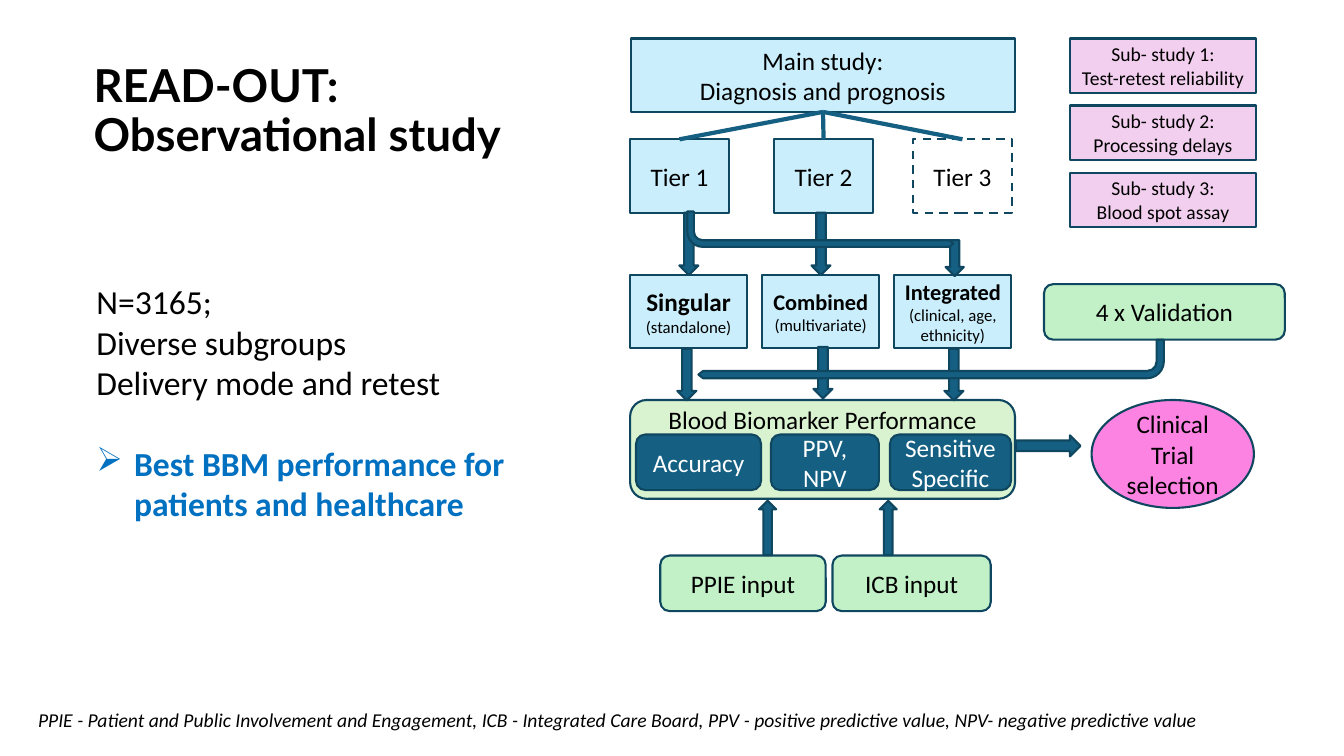
from dataclasses import dataclass

from lxml import etree
from pptx import Presentation
from pptx.dml.color import RGBColor
from pptx.enum.dml import MSO_LINE
from pptx.enum.shapes import MSO_CONNECTOR, MSO_SHAPE
from pptx.enum.text import MSO_ANCHOR, PP_ALIGN
from pptx.oxml.ns import qn
from pptx.util import Cm, Pt

RECT, ROUND, OVAL = MSO_SHAPE.RECTANGLE, MSO_SHAPE.ROUNDED_RECTANGLE, MSO_SHAPE.OVAL
DOWN, UP, RIGHT = MSO_SHAPE.DOWN_ARROW, MSO_SHAPE.UP_ARROW, MSO_SHAPE.RIGHT_ARROW
BENT = MSO_SHAPE.BENT_ARROW
STRAIGHT, DASH = MSO_CONNECTOR.STRAIGHT, MSO_LINE.DASH
TOP, MIDDLE = MSO_ANCHOR.TOP, MSO_ANCHOR.MIDDLE
LEFT, CENTER = PP_ALIGN.LEFT, PP_ALIGN.CENTER


@dataclass(frozen=True)
class Theme:
    """Colours, fonts and type sizes of the slide."""
    black: str = "000000"
    white: str = "FFFFFF"
    accent: str = "0070C0"
    outline: str = "104760"
    teal: str = "156082"
    sky: str = "CAEEFB"
    lilac: str = "F2CFEE"
    lime: str = "D9F2D0"
    mint: str = "C2F1C8"
    pink: str = "FD83E3"
    title_font: str = "Lato"
    body_font: str = "Calibri"
    title: float = 32.4
    body: float = 24
    label: float = 18
    heading: float = 16
    note: float = 14
    detail: float = 12
    border: float = 1.5
    branch: float = 3


THEME = Theme()


def write(tf, text, size=THEME.label, color=THEME.black, bold=False, italic=False,
          font=THEME.body_font, align=LEFT, before=0, spacing=None, bullet=None):
    """Add one formatted paragraph to a text frame."""
    p = tf.add_paragraph() if tf.text else tf.paragraphs[0]
    if bullet:
        pPr = p._p.get_or_add_pPr()
        pPr.set("marL", str(Cm(0.95)))
        pPr.set("indent", str(-Cm(0.95)))
        etree.SubElement(pPr, qn("a:buChar")).set("char", bullet)
    p.alignment = align
    if before:
        p.space_before = Pt(before)
    if spacing:
        p.line_spacing = spacing
    r = p.add_run()
    r.text = text
    r.font.name, r.font.size = font, Pt(size)
    r.font.bold, r.font.italic = bold, italic
    r.font.color.rgb = RGBColor.from_string(color)


class SlideBuilder:
    """Draws styled elements on the current slide."""

    def __init__(self, slide, theme):
        """Keep the slide and its theme."""
        self.s, self.theme = slide, theme

    def text(self, x, y, w, h, lines, top=0.13):
        """Add a text box from (text, format) lines."""
        tf = self.s.shapes.add_textbox(Cm(x), Cm(y), Cm(w), Cm(h)).text_frame
        tf.word_wrap, tf.margin_top = True, Cm(top)
        for line, fmt in lines:
            write(tf, line, **fmt)

    def shape(self, kind, x, y, w, h, fill):
        """Add an outlined preset shape."""
        sp = self.s.shapes.add_shape(kind, Cm(x), Cm(y), Cm(w), Cm(h))
        sp.shadow.inherit = False
        sp.fill.solid()
        sp.fill.fore_color.rgb = RGBColor.from_string(fill)
        sp.line.color.rgb = RGBColor.from_string(self.theme.outline)
        sp.line.width = Pt(self.theme.border)
        return sp

    def box(self, kind, x, y, w, h, fill, lines, anchor=MIDDLE, **fmt):
        """Add a shape with centred lines, each a text or a (text, format) pair."""
        sp = self.shape(kind, x, y, w, h, fill)
        tf = sp.text_frame
        tf.word_wrap, tf.vertical_anchor = True, anchor
        if anchor == TOP:
            tf.margin_top = 0
        for line in lines:
            text, own = (line, {}) if isinstance(line, str) else line
            write(tf, text, align=CENTER, **{**fmt, **own})
        return sp

    def arrow(self, kind, x, y, w, h):
        """Add a block arrow."""
        return self.shape(kind, x, y, w, h, self.theme.teal)

    def bent_arrow(self, x, y, w, h, flip=False):
        """Add a thin elbow that runs down and then sideways."""
        sp = self.arrow(BENT, x, y, w, h)
        for i, value in enumerate((0.188, 0.094, 0.12, 0.438)):
            sp.adjustments[i] = value
        sp.rotation = 180
        if flip:
            sp._element.spPr.get_or_add_xfrm().set("flipH", "1")

    def branch(self, parent, child):
        """Join the bottom of one box to the top of another."""
        sp = self.s.shapes.add_connector(STRAIGHT, 0, 0, 0, 0)
        sp.begin_connect(parent, 2)
        sp.end_connect(child, 0)
        sp.line.color.rgb = RGBColor.from_string(self.theme.teal)
        sp.line.width = Pt(self.theme.branch)
        etree.SubElement(sp._element.spPr, qn("a:effectLst"))


def main():
    """Build the study overview slide."""
    prs = Presentation()
    prs.slide_width, prs.slide_height = Cm(33.87), Cm(19.05)
    t = THEME
    b = SlideBuilder(prs.slides.add_slide(prs.slide_layouts[6]), t)

    title = dict(size=t.title, font=t.title_font, bold=True, spacing=0.9)
    b.text(2.11, 1.6, 11.99, 3.68,
           [("READ-OUT:", title), ("Observational study", title)], top=0)
    body = dict(size=t.body)
    b.text(2.18, 6.96, 11.13, 8.46, [
        ("N=3165;", body), ("Diverse subgroups", body), ("Delivery mode and retest", body),
        ("Best BBM performance for patients and healthcare",
         dict(size=t.body, color=t.accent, bold=True, before=29, bullet="➢"))])

    study = b.box(RECT, 15.9, 0.97, 9.68, 1.85, t.sky,
                  ["Main study:", "Diagnosis and prognosis"])
    substudies = ("Test-retest reliability", "Processing delays", "Blood spot assay")
    for i, topic in enumerate(substudies):
        b.box(RECT, 26.96, 0.97 + 1.69 * i, 4.7, 1.37, t.lilac,
              [f"Sub- study {i + 1}:", topic], size=t.note)

    tiers = [b.box(RECT, x, 3.51, 2.49, 1.85, fill, [f"Tier {n}"])
             for n, (x, fill) in enumerate(
                 ((15.88, t.sky), (19.51, t.sky), (23.01, t.white)), 1)]
    tiers[2].line.dash_style = DASH

    models = (("Singular", t.label, "(standalone)"),
              ("Combined", t.heading, "(multivariate)"),
              ("Integrated", t.heading, "(clinical, age, ethnicity)"))
    for i, (name, size, detail) in enumerate(models):
        b.box(RECT, 15.88 + 3.33 * i, 6.93, 2.95, 1.85, t.sky,
              [(name, dict(size=size, bold=True)), (detail, dict(size=t.detail))])

    b.box(ROUND, 15.88, 10.08, 9.7, 2.49, t.lime, ["Blood Biomarker Performance"], TOP)
    measures = ((16.03, 3.15, ["Accuracy"]), (19.43, 2.72, ["PPV, NPV"]),
                (22.43, 3.05, ["Sensitive", "Specific"]))
    for x, w, lines in measures:
        b.box(ROUND, x, 10.95, w, 1.4, t.teal, lines, color=t.white)

    inputs = ((16.64, 14, 4.17, "PPIE input"), (20.98, 14, 3.99, "ICB input"),
              (26.31, 7.16, 6.07, "4 x Validation"))
    for x, y, w, label in inputs:
        b.box(ROUND, x, y, w, 1.4, t.mint, [label])

    for tier in tiers:
        b.branch(study, tier)

    arrows = ((DOWN, 17.12, 5.36, 0.48, 1.57), (DOWN, 20.45, 5.36, 0.48, 1.57),
              (DOWN, 17.07, 8.79, 0.48, 1.3), (DOWN, 20.5, 8.74, 0.48, 1.3),
              (DOWN, 23.8, 8.79, 0.48, 1.3), (UP, 19.13, 12.62, 0.43, 1.37),
              (UP, 22.17, 12.62, 0.43, 1.37), (RIGHT, 25.6, 10.97, 1.63, 0.53),
              (DOWN, 23.83, 6.05, 0.46, 0.91))
    for arrow in arrows:
        b.arrow(*arrow)
    b.bent_arrow(17.6, 8.56, 11.73, 0.97)
    b.bent_arrow(17.32, 5.33, 6.71, 0.89, flip=True)
    b.box(OVAL, 27.51, 10.08, 4.09, 2.72, t.pink, ["Clinical Trial selection"])

    b.text(0.71, 17.7, 31.32, 0.86, [
        ("PPIE - Patient and Public Involvement and Engagement, ICB - Integrated Care Board, "
         "PPV - positive predictive value, NPV- negative predictive value",
         dict(size=t.note, italic=True))])
    prs.save("out.pptx")


if __name__ == "__main__":
    main()
